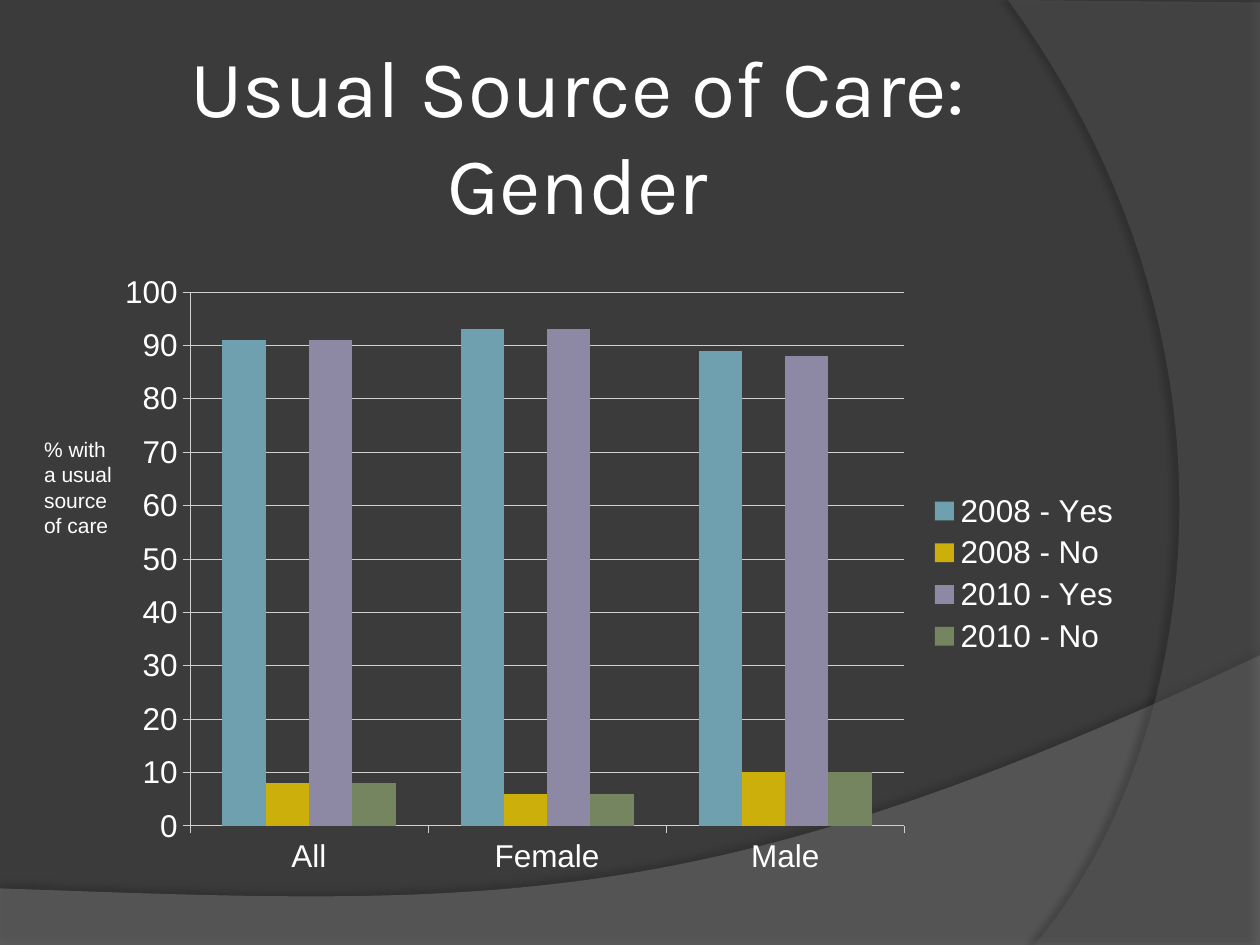
"""Build a slide comparing usual source of care by gender in a clustered column chart."""
from lxml import etree
from pptx import Presentation
from pptx.chart.data import CategoryChartData
from pptx.dml.color import RGBColor
from pptx.enum.chart import XL_CHART_TYPE, XL_LEGEND_POSITION, XL_TICK_MARK
from pptx.enum.text import MSO_ANCHOR, PP_ALIGN
from pptx.oxml import parse_xml
from pptx.oxml.ns import nsdecls, qn
from pptx.util import Cm, Pt

COLUMNS = XL_CHART_TYPE.COLUMN_CLUSTERED
RIGHT = XL_LEGEND_POSITION.RIGHT
OUTSIDE = XL_TICK_MARK.OUTSIDE
TOP = MSO_ANCHOR.TOP
CENTER = PP_ALIGN.CENTER
LEFT = PP_ALIGN.LEFT
COLORS = {
    "background": "3B3B3B",
    "wave": "7F7F7F",
    "arc": "5E5E5E",
    "text": "FFFFFF",
    "grid": "D0D0D0",
    "2008 - Yes": "6EA0B0",
    "2008 - No": "CCAF0A",
    "2010 - Yes": "8D89A4",
    "2010 - No": "748560",
}
CURVE_STEPS = 48
CHART_WIDTH, CHART_HEIGHT = 20.75, 12.57


def color(name):
    return RGBColor.from_string(COLORS[name])


def add_text(slide, box, lines, font_name, size, alignment):
    shape = slide.shapes.add_textbox(*[Cm(length) for length in box])
    frame = shape.text_frame
    frame.word_wrap = True
    frame.vertical_anchor = TOP
    for index, line in enumerate(lines):
        paragraph = frame.add_paragraph() if index else frame.paragraphs[0]
        paragraph.alignment = alignment
        run = paragraph.add_run()
        run.text = line
        run.font.name = font_name
        run.font.size = Pt(size)
        run.font.color.rgb = color("text")


presentation = Presentation()
presentation.slide_width = Cm(25.4)
presentation.slide_height = Cm(19.05)
slide = presentation.slides.add_slide(presentation.slide_layouts[6])
slide.background.fill.solid()
slide.background.fill.fore_color.rgb = color("background")

swooshes = [
    ("wave", [(0, 17.91), (0, 19.05), (25.4, 19.05)],
     [(25.4, 13.21), (14.2, 18.52), (9.93, 18.26), (0, 17.91)], 45, 35, 3.5, 270),
    ("arc", [(25.4, 0.05), (25.4, 19.05)],
     [(20.85, 19.05), (23.75, 15.72), (25.86, 7.62), (20.32, 0)], 40, 45, 4, 180),
]
for name, corners, curve, opacity, shadow_opacity, distance, angle in swooshes:
    points = list(corners)
    for step in range(CURVE_STEPS + 1):
        t = step / CURVE_STEPS
        weights = ((1 - t) ** 3, 3 * t * (1 - t) ** 2, 3 * t * t * (1 - t), t ** 3)
        points.append(tuple(sum(w * point[axis] for w, point in zip(weights, curve))
                            for axis in (0, 1)))
    points = [(Cm(x), Cm(y)) for x, y in points]
    builder = slide.shapes.build_freeform(*points[0])
    builder.add_line_segments(points[1:], close=True)
    shape = builder.convert_to_shape()
    shape._element.remove(shape._element.txBody)
    shape.fill.solid()
    shape.fill.fore_color.rgb = color(name)
    fill_color = shape.fill._xPr.find(qn("a:solidFill"))[0]
    etree.SubElement(fill_color, qn("a:alpha"), val=str(opacity * 1000))
    shape.line.fill.background()
    shape._element.spPr.append(parse_xml(
        f'<a:effectLst {nsdecls("a")}><a:outerShdw blurRad="{Pt(4)}" dist="{Pt(distance)}" '
        f'dir="{angle * 60000}" algn="ctr" rotWithShape="0"><a:srgbClr val="000000">'
        f'<a:alpha val="{shadow_opacity * 1000}"/></a:srgbClr></a:outerShdw></a:effectLst>'))

data = CategoryChartData()
data.categories = ["All", "Female", "Male"]
data.add_series("2008 - Yes", (91, 93, 89))
data.add_series("2008 - No", (8, 6, 10))
data.add_series("2010 - Yes", (91, 93, 88))
data.add_series("2010 - No", (8, 6, 10))
chart = slide.shapes.add_chart(
    COLUMNS, Cm(2.11), Cm(5.28), Cm(CHART_WIDTH), Cm(CHART_HEIGHT), data).chart
chart.has_title = False
chart.font.name = "Arial"
chart.font.size = Pt(18)
chart.font.color.rgb = color("text")
chart.has_legend = True
chart.legend.position = RIGHT
chart.legend.include_in_layout = False

plot = chart.plots[0]
plot.gap_width = 150
plot.overlap = 0
plot.vary_by_categories = False
for series in plot.series:
    series.format.fill.solid()
    series.format.fill.fore_color.rgb = color(series.name)

value_axis = chart.value_axis
value_axis.minimum_scale = 0
value_axis.maximum_scale = 100
value_axis.major_unit = 10
value_axis.has_major_gridlines = True
for axis in (chart.category_axis, value_axis):
    axis.major_tick_mark = OUTSIDE
for line in (chart.category_axis.format.line, value_axis.format.line,
             value_axis.major_gridlines.format.line):
    line.color.rgb = color("grid")
    line.width = Pt(0.5)

plot_area = chart._chartSpace.chart.plotArea
for layout in plot_area.findall(qn("c:layout")):
    plot_area.remove(layout)
plot_area.insert(0, parse_xml(
    f'<c:layout {nsdecls("c")}><c:manualLayout><c:layoutTarget val="inner"/>'
    '<c:xMode val="edge"/><c:yMode val="edge"/>'
    f'<c:x val="{1.72 / CHART_WIDTH}"/><c:y val="{0.61 / CHART_HEIGHT}"/>'
    f'<c:w val="{14.4 / CHART_WIDTH}"/><c:h val="{10.76 / CHART_HEIGHT}"/>'
    '</c:manualLayout></c:layout>'))

add_text(slide, (1.27, 0.62, 20.75, 3.81), ["Usual Source of Care:", "Gender"],
         "Karla", 46, CENTER)
add_text(slide, (0.64, 8.68, 1.9, 2.31), ["% with a usual source of care"],
         "Arial", 12, LEFT)

presentation.save("out.pptx")
